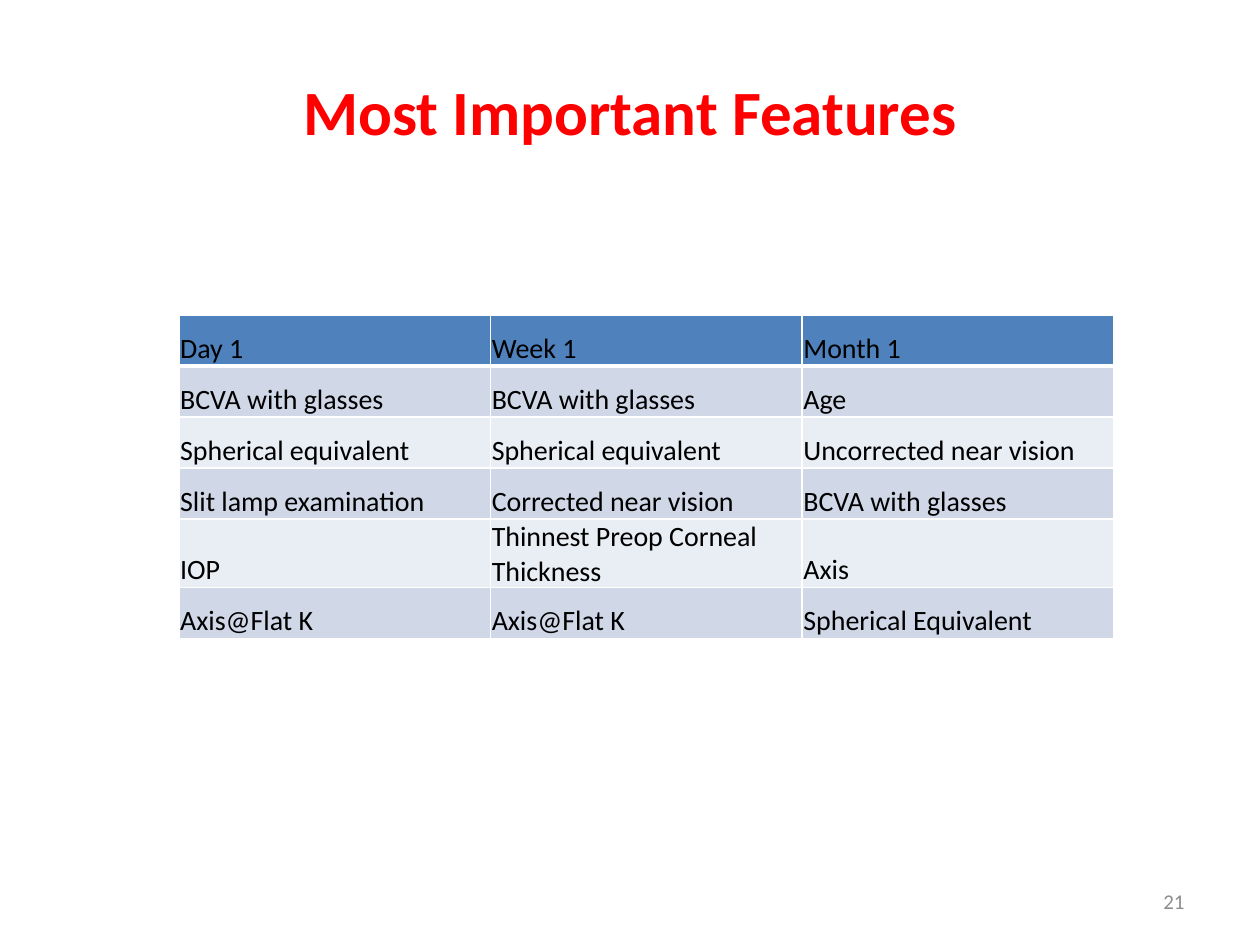
import pptx
import pptx.dml.color
import pptx.enum.text
import pptx.oxml
import pptx.oxml.ns
import pptx.util

RED = pptx.dml.color.RGBColor(0xFF, 0x00, 0x00)
BLACK = pptx.dml.color.RGBColor(0x00, 0x00, 0x00)
GREY = pptx.dml.color.RGBColor(0x8C, 0x8C, 0x8C)
WHITE = pptx.dml.color.RGBColor(0xFF, 0xFF, 0xFF)
HEADER_BLUE = pptx.dml.color.RGBColor(0x4F, 0x81, 0xBD)
BANDS = [
    pptx.dml.color.RGBColor(0xE9, 0xED, 0xF4),
    pptx.dml.color.RGBColor(0xD0, 0xD8, 0xE8),
]
ALIGN = pptx.enum.text.PP_ALIGN
ANCHOR = pptx.enum.text.MSO_ANCHOR


def write(frame, text, size=16, color=BLACK, bold=False, align=ALIGN.LEFT):
    frame.word_wrap = True
    paragraph = frame.paragraphs[0]
    paragraph.alignment = align
    run = paragraph.add_run()
    run.text = text
    run.font.name = "Calibri"
    run.font.size = pptx.util.Pt(size)
    run.font.bold = bold
    run.font.color.rgb = color


def add_border(cell, side, width):
    nsdecls = pptx.oxml.ns.nsdecls("a")
    line = pptx.oxml.parse_xml(
        f'<a:{side} {nsdecls} w="{pptx.util.Pt(width)}"><a:solidFill>'
        f'<a:srgbClr val="{WHITE}"/></a:solidFill></a:{side}>'
    )
    cell._tc.get_or_add_tcPr().append(line)


deck = pptx.Presentation()
deck.slide_width = WIDTH = pptx.util.Inches(10)
deck.slide_height = HEIGHT = pptx.util.Inches(7.5)
slide = deck.slides.add_slide(deck.slide_layouts[6])

# Slide number
number = slide.shapes.add_textbox(
    pptx.util.Inches(7.17), pptx.util.Inches(6.95),
    pptx.util.Inches(2.33), pptx.util.Inches(0.4),
).text_frame
number.vertical_anchor = ANCHOR.MIDDLE
write(number, "21", size=12, color=GREY, align=ALIGN.RIGHT)

# Title across the full width
title = slide.shapes.add_textbox(0, HEIGHT // 30, WIDTH, HEIGHT // 6).text_frame
title.vertical_anchor = ANCHOR.MIDDLE
write(title, "Most Important Features", size=36, color=RED, bold=True, align=ALIGN.CENTER)

# Feature table: one column per follow-up visit
features = [
    ["Day 1", "Week 1", "Month 1"],
    ["BCVA with glasses", "BCVA with glasses", "Age"],
    ["Spherical equivalent", "Spherical equivalent", "Uncorrected near vision"],
    ["Slit lamp examination", "Corrected near vision", "BCVA with glasses"],
    ["IOP", "Thinnest Preop Corneal Thickness", "Axis"],
    ["Axis@Flat K", "Axis@Flat K", "Spherical Equivalent"],
]
visits = slide.shapes.add_table(
    len(features), len(features[0]),
    pptx.util.Inches(1.42), HEIGHT // 3,
    pptx.util.Inches(7.42), pptx.util.Inches(2.43),
).table

for row, entries in enumerate(features):
    for column, entry in enumerate(entries):
        cell = visits.cell(row, column)
        cell.margin_left = cell.margin_right = cell.margin_top = pptx.util.Inches(0.01)
        cell.margin_bottom = 0
        cell.vertical_anchor = ANCHOR.BOTTOM
        write(cell.text_frame, entry)
        # Borders come before the fill in the cell's properties
        for side in ("lnL", "lnR", "lnT", "lnB"):
            under_header = (row, side) in ((0, "lnB"), (1, "lnT"))
            add_border(cell, side, 3 if under_header else 1)
        cell.fill.solid()
        cell.fill.fore_color.rgb = BANDS[row % 2] if row else HEADER_BLUE

deck.save("out.pptx")
